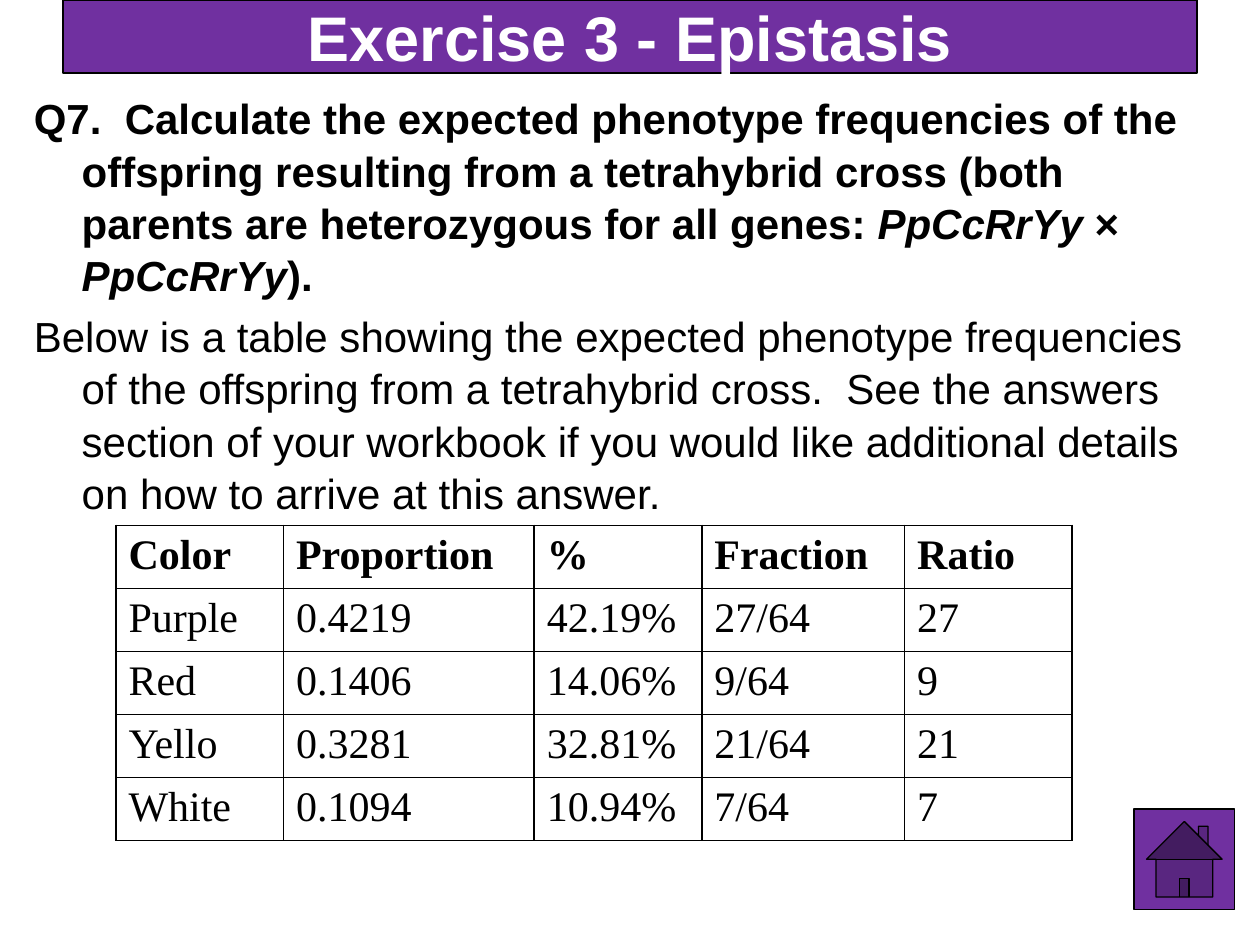
"""Build the tetrahybrid cross answer slide."""
from lxml.etree import SubElement
from pptx import Presentation
from pptx.dml.color import RGBColor
from pptx.enum.shapes import MSO_SHAPE as Kind
from pptx.enum.text import MSO_ANCHOR as Anchor, PP_ALIGN as Align
from pptx.oxml.ns import qn
from pptx.util import Inches, Pt

PURPLE = RGBColor(0x70, 0x30, 0xA0)
WHITE = RGBColor(255, 255, 255)
BLACK = RGBColor(0, 0, 0)

TITLE = "Exercise 3 - Epistasis"
BODY = [
    [("Q7.  Calculate the expected phenotype frequencies of the offspring "
      "resulting from a tetrahybrid cross (both parents are heterozygous "
      "for all genes: ", True, False),
     ("PpCcRrYy", True, True), (" × ", True, False),
     ("PpCcRrYy", True, True), (").", True, False)],
    [("Below is a table showing the expected phenotype frequencies of the "
      "offspring from a tetrahybrid cross.  See the answers section of your "
      "workbook if you would like additional details on how to arrive at "
      "this answer.", False, False)],
]
ROWS = [
    ("Color", "Proportion", "%", "Fraction", "Ratio"),
    ("Purple", "0.4219", "42.19%", "27/64", "27"),
    ("Red", "0.1406", "14.06%", "9/64", "9"),
    ("Yello", "0.3281", "32.81%", "21/64", "21"),
    ("White", "0.1094", "10.94%", "7/64", "7"),
]
WIDTHS = [1.33, 1.99, 1.33, 1.61, 1.33]
HIGH = 0.47


def style(run, name, size, color, bold=False, italic=False):
    font = run.font
    font.name, font.size = name, Pt(size)
    font.bold, font.italic = bold, italic
    font.color.rgb = color


def panel(slide, kind, *box):
    shape = slide.shapes.add_shape(kind, *map(Inches, box))
    shape.shadow.inherit = False
    shape.fill.solid()
    shape.fill.fore_color.rgb = PURPLE
    shape.line.color.rgb = BLACK
    shape.line.width = Pt(0.75)
    return shape


def border(cell):
    props = cell._tc.get_or_add_tcPr()
    for spot, side in enumerate(("lnL", "lnR", "lnT", "lnB")):
        line = SubElement(props, qn("a:" + side), w=str(Pt(1)))
        fill = SubElement(line, qn("a:solidFill"))
        SubElement(fill, qn("a:srgbClr"), val=str(BLACK))
        props.insert(spot, line)


def add_title(slide):
    frame = panel(slide, Kind.RECTANGLE, 0.5, 0, 9, 0.58).text_frame
    frame.text = TITLE
    frame.vertical_anchor = Anchor.MIDDLE
    para = frame.paragraphs[0]
    para.alignment = Align.CENTER
    style(para.runs[0], "Arial", 36, WHITE, True)


def add_body(slide):
    box = slide.shapes.add_textbox(*map(Inches, (0.17, 0.67, 9.58, 4.95)))
    frame = box.text_frame
    frame.word_wrap = True
    for spot, parts in enumerate(BODY):
        para = frame.add_paragraph() if spot else frame.paragraphs[0]
        para.space_before = Pt(4.8)
        para.line_spacing = 1.04
        props = para._p.get_or_add_pPr()
        props.set("marL", str(Inches(0.38)))
        props.set("indent", str(Inches(-0.38)))
        for text, bold, italic in parts:
            run = para.add_run()
            run.text = text
            style(run, "Arial", 24, BLACK, bold, italic)


def add_grid(slide):
    size = (0.92, 4.17, sum(WIDTHS), HIGH * len(ROWS))
    table = slide.shapes.add_table(
        len(ROWS), len(WIDTHS), *map(Inches, size)).table
    for col, width in zip(table.columns, WIDTHS):
        col.width = Inches(width)
    for top, (row, texts) in enumerate(zip(table.rows, ROWS)):
        row.height = Inches(HIGH)
        for cell, text in zip(row.cells, texts):
            cell.text_frame.text = text
            run = cell.text_frame.paragraphs[0].runs[0]
            style(run, "Times New Roman", 24, BLACK, top == 0)
            cell.fill.solid()
            cell.fill.fore_color.rgb = WHITE
            border(cell)


def main():
    deck = Presentation()
    deck.slide_width, deck.slide_height = Inches(10), Inches(7.5)
    slide = deck.slides.add_slide(deck.slide_layouts[6])
    add_title(slide)
    add_body(slide)
    panel(slide, Kind.ACTION_BUTTON_HOME, 9, 6.42, 0.8, 0.8)
    add_grid(slide)
    deck.save("out.pptx")


if __name__ == "__main__":
    main()
